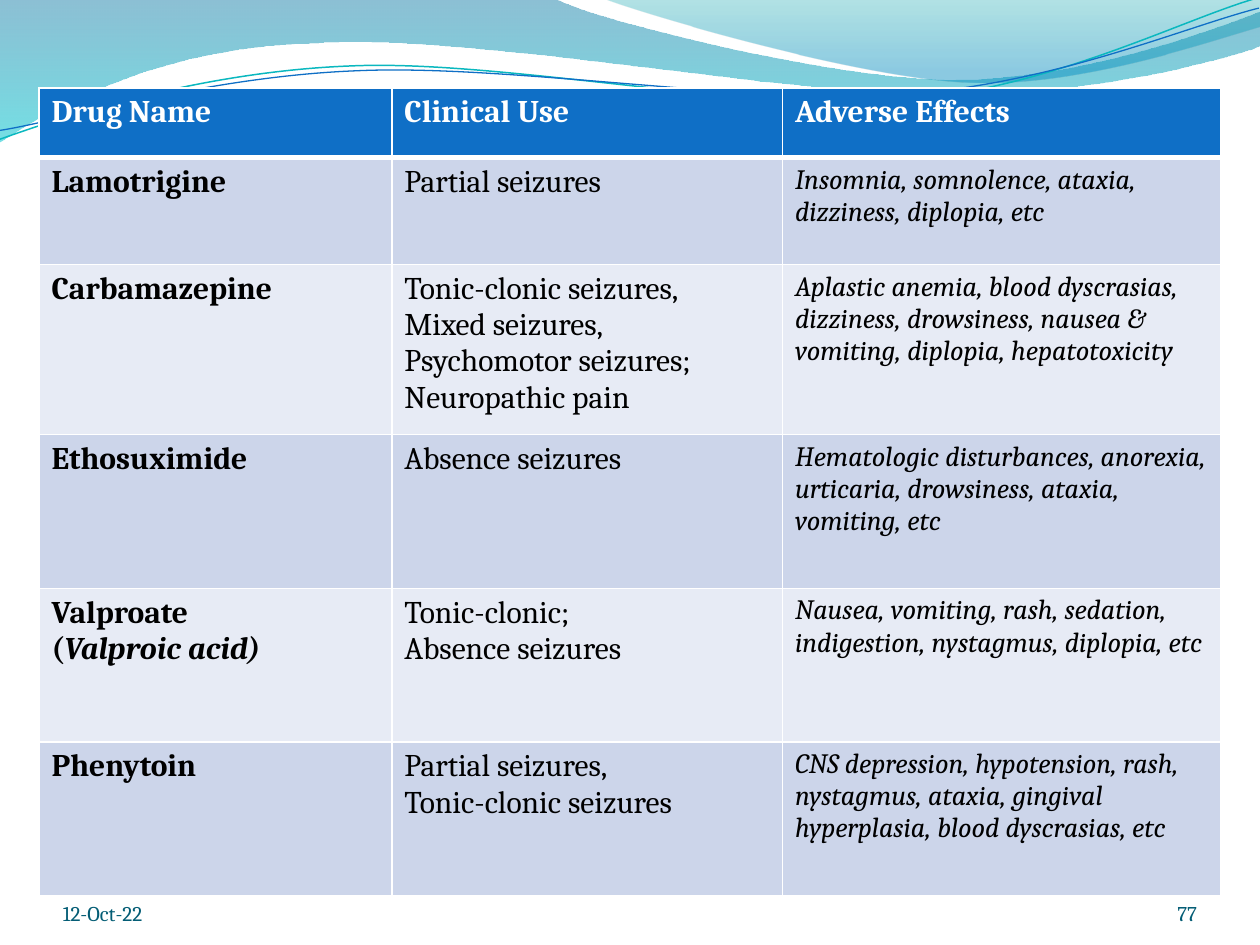
from lxml import etree
from pptx import Presentation
from pptx.dml.color import RGBColor
from pptx.enum import text
from pptx.oxml.ns import qn
from pptx.util import Inches, Pt

FONT = "Cambria"


def color(value):
    return RGBColor.from_string(value)


def add_wave(slide, start, segments, closed):
    points = [(Inches(x), Inches(y)) for segment in segments
              for x, y in zip(segment[::2], segment[1::2])]
    builder = slide.shapes.build_freeform(Inches(start[0]), Inches(start[1]))
    builder.add_line_segments(points, close=closed)
    wave = builder.convert_to_shape()
    wave.shadow.inherit = False
    lines = iter(list(wave._element.iter(qn("a:lnTo"))))
    for segment in segments:
        first = next(lines)
        if len(segment) == 6:
            curve = etree.Element(qn("a:cubicBezTo"))
            first.addprevious(curve)
            for line in (first, next(lines), next(lines)):
                curve.append(line[0])
                line.getparent().remove(line)
    return wave


deck = Presentation()
deck.slide_width, deck.slide_height = Inches(10), Inches(7.5)
page = deck.slides.add_slide(deck.slide_layouts[6])

bands = [
    ((0, 0),
     [(4.4, -0.01), (4.76, 0.17, 6.64, 0.63, 7.58, 0.63), (8.53, 0.63, 9.58, 0.26, 10, 0.09),
      (10.01, 0.36), (9.83, 0.44, 8.7, 0.76, 7.46, 0.75), (6.22, 0.75, 3.82, 0.28, 2.57, 0.34),
      (1.29, 0.36, 0.46, 0.83, -0.01, 1.13), (0, 0)],
     [(0, "0074A1", 45), (1, "00C6CF", 55)]),
    ((4.79, -0.01),
     [(5.09, 0.11, 6.82, 0.62, 7.69, 0.65), (8.56, 0.69, 9.61, 0.32, 10, 0.21), (10, 0),
      (4.79, -0.01)],
     [(0, "00A1A9", 30), (0.8, "008BBF", 45)]),
]
for start, segments, stops in bands:
    band = add_wave(page, start, segments, True)
    band.line.fill.background()
    band.fill.gradient()
    band.fill.gradient_angle = 270
    for stop, (position, shade, _) in zip(band.fill.gradient_stops, stops):
        stop.position = position
        stop.color.rgb = color(shade)
    for node, (_, _, opacity) in zip(band._element.spPr.iter(qn("a:srgbClr")), stops):
        etree.SubElement(node, qn("a:alpha")).set("val", str(opacity * 1000))

strands = [
    ((-0.02, 0.87),
     [(0.47, 0.72, 1.58, 0.41, 2.78, 0.42), (3.96, 0.42, 5.91, 0.93, 7.12, 0.9),
      (8.32, 0.87, 9.4, 0.36, 10, 0.22)], "0AB8BF", 0.85),
    ((-0.02, 0.8),
     [(0.46, 0.75, 1.64, 0.45, 2.83, 0.46), (4.03, 0.46, 5.96, 0.88, 7.16, 0.85),
      (8.35, 0.83, 9.42, 0.42, 10.01, 0.3)], "0F6FC6", 0.75),
]
for start, segments, shade, width in strands:
    strand = add_wave(page, start, segments, False)
    strand.rotation = 357.3
    strand.fill.background()
    strand.line.color.rgb = color(shade)
    strand.line.width = Pt(width)

rows = [
    ("Drug Name", "Clinical Use", "Adverse Effects"),
    ("Lamotrigine", "Partial seizures", "Insomnia, somnolence, ataxia, dizziness, diplopia, etc"),
    ("Carbamazepine",
     "Tonic-clonic seizures,\nMixed seizures, Psychomotor seizures;\nNeuropathic pain",
     "Aplastic anemia, blood dyscrasias, dizziness, drowsiness, nausea & vomiting, "
     "diplopia, hepatotoxicity"),
    ("Ethosuximide", "Absence seizures",
     "Hematologic disturbances, anorexia, urticaria, drowsiness, ataxia, vomiting, etc"),
    ("Valproate\n(", "Tonic-clonic;\nAbsence seizures",
     "Nausea, vomiting, rash, sedation, indigestion, nystagmus, diplopia, etc"),
    ("Phenytoin", "Partial seizures,\nTonic-clonic seizures",
     "CNS depression, hypotension, rash, nystagmus, ataxia, gingival hyperplasia, "
     "blood dyscrasias, etc"),
]
widths = [2.8, 3.1, 3.48]
heights = [0.55, 0.85, 1.35, 1.22, 1.22, 1.22]
table = page.shapes.add_table(len(rows), len(widths), Inches(0.31), Inches(0.7),
                              Inches(sum(widths)), Inches(sum(heights))).table
for column, width in zip(table.columns, widths):
    column.width = Inches(width)
for row, height in zip(table.rows, heights):
    row.height = Inches(height)

for r, row in enumerate(rows):
    header = r == 0
    fill = "0F6FC6" if header else ("E7EBF5", "CCD5EA")[r % 2]
    for c, words in enumerate(row):
        cell = table.cell(r, c)
        borders = cell._tc.get_or_add_tcPr()
        for side in "LRTB":
            thick = (header and side == "B") or (r == 1 and side == "T")
            edge = etree.SubElement(borders, qn("a:ln" + side), w=str(Pt(3 if thick else 1)))
            paint = etree.SubElement(edge, qn("a:solidFill"))
            etree.SubElement(paint, qn("a:srgbClr"), val="FFFFFF")
        cell.fill.solid()
        cell.fill.fore_color.rgb = color(fill)
        cell.text_frame.text = words
        if words.endswith("("):
            cell.text_frame.paragraphs[-1].add_run().text = "Valproic acid)"
        effects = c == 2 and not header
        for para in cell.text_frame.paragraphs:
            for index, span in enumerate(para.runs):
                span.font.name = FONT
                span.font.size = Pt(16 if effects else 18)
                span.font.bold = header or c == 0
                span.font.italic = effects or index > 0
                span.font.color.rgb = color("FFFFFF" if header else "000000")

footers = [
    ("77", 8.67, 0.83, text.PP_ALIGN.RIGHT),
    ("12-Oct-22", 0.5, 2.33, text.PP_ALIGN.LEFT),
]
for words, left, width, align in footers:
    box = page.shapes.add_textbox(Inches(left), Inches(6.95), Inches(width), Inches(0.4))
    frame = box.text_frame
    frame.word_wrap = True
    frame.vertical_anchor = text.MSO_ANCHOR.BOTTOM
    frame.margin_left = frame.margin_right = frame.margin_top = frame.margin_bottom = 0
    frame.text = words
    para = frame.paragraphs[0]
    para.alignment = align
    span = para.runs[0]
    span.font.name = FONT
    span.font.size = Pt(12)
    span.font.color.rgb = color("045D75")

deck.save("out.pptx")
